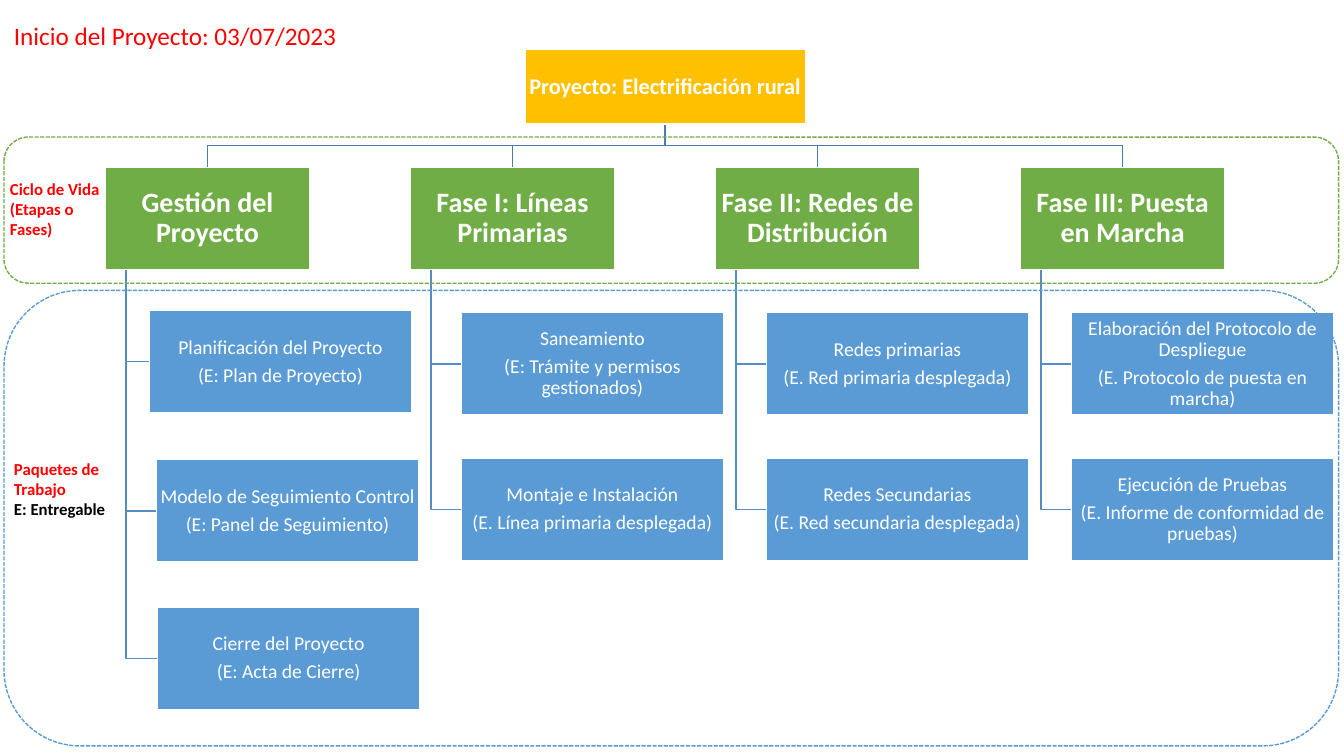
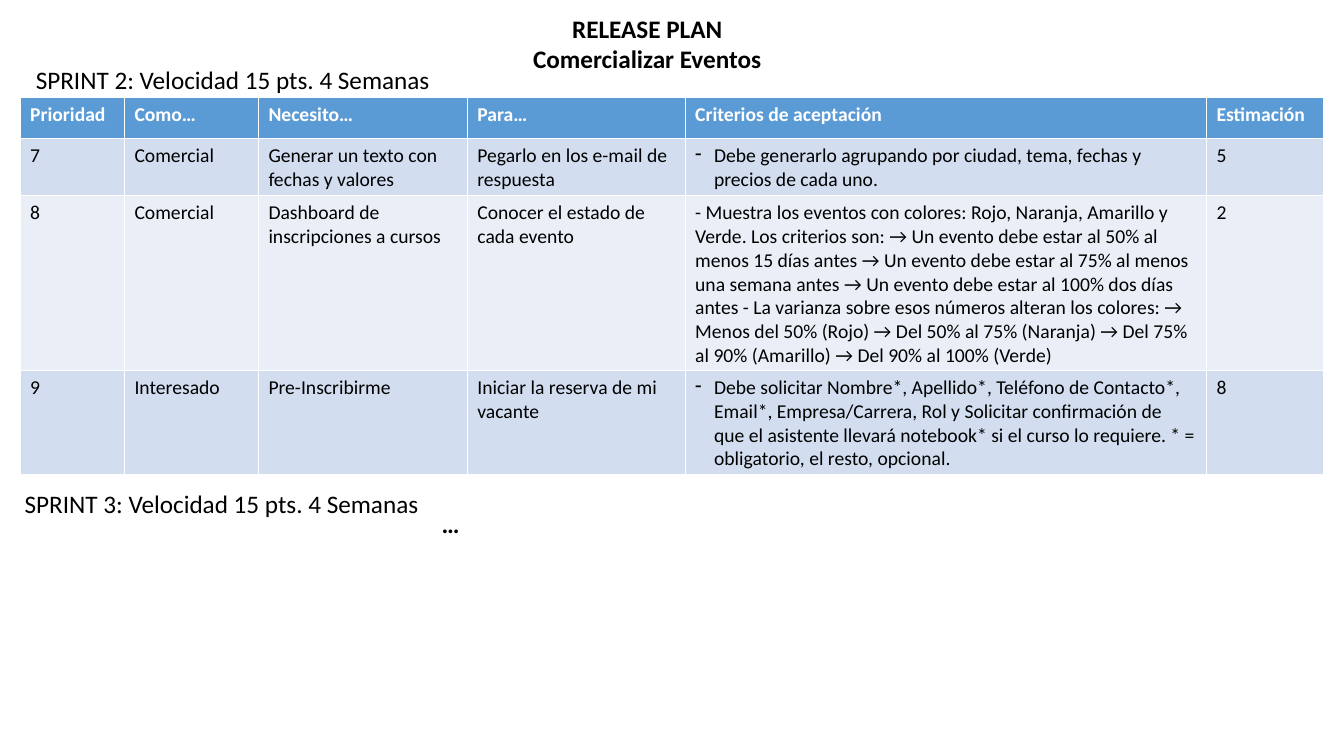
from lxml import etree
from pptx import Presentation, util as u
from pptx.dml.color import RGBColor
from pptx.enum import dml, shapes, text
from pptx.oxml.ns import qn

Pt = u.Pt
FONT = "Calibri"
HUES = {
    "white": "FFFFFF", "black": "000000", "red": "FF0000", "gold": "FFC000",
    "green": "70AD47", "blue": "5B9BD5", "trunk": "497CAB", "branch": "538DC1",
    "odd": "D2DEEF", "even": "EAEFF7",
}
LEFT, MID = text.PP_ALIGN.LEFT, text.PP_ALIGN.CENTER

GAP = 217.9
PHASE = (146.4, 73.2)
PACK = (187.4, 73.2)
PHASES = [
    ("Gestión del Proyecto", [
        (31.7, 221.8, "Planificación del Proyecto", "(E: Plan de Proyecto)"),
        (36.8, 328.4, "Modelo de Seguimiento Control", "(E: Panel de Seguimiento)"),
        (37.5, 433.6, "Cierre del Proyecto", "(E: Acta de Cierre)")]),
    ("Fase I: Líneas Primarias", [
        (36.6, 223.4, "Saneamiento", "(E: Trámite y permisos gestionados)"),
        (36.6, 327.4, "Montaje e Instalación", "(E. Línea primaria desplegada)")]),
    ("Fase II: Redes de Distribución", [
        (36.6, 223.4, "Redes primarias", "(E. Red primaria desplegada)"),
        (36.6, 327.4, "Redes Secundarias", "(E. Red secundaria desplegada)")]),
    ("Fase III: Puesta en Marcha", [
        (36.6, 223.4, "Elaboración del Protocolo de Despliegue",
         "(E. Protocolo de puesta en marcha)"),
        (36.6, 327.4, "Ejecución de Pruebas", "(E. Informe de conformidad de pruebas)")]),
]

WIDTHS = [74.5, 95.7, 149.2, 155.6, 372.4, 83.6]
ROWS = [
    ["Prioridad", "Como…", "Necesito…", "Para…", "Criterios de aceptación", "Estimación"],
    ["7", "Comercial", "Generar un texto con fechas y valores",
     "Pegarlo en los e-mail de respuesta",
     "Debe generarlo agrupando por ciudad, tema, fechas y precios de cada uno.", "5"],
    ["8", "Comercial", "Dashboard de inscripciones a cursos",
     "Conocer el estado de cada evento",
     "- Muestra los eventos con colores: Rojo, Naranja, Amarillo y Verde. Los criterios "
     "son: → Un evento debe estar al 50% al menos 15 días antes → Un evento debe estar "
     "al 75% al menos una semana antes → Un evento debe estar al 100% dos días antes - "
     "La varianza sobre esos números alteran los colores: → Menos del 50% (Rojo) → Del "
     "50% al 75% (Naranja) → Del 75% al 90% (Amarillo) → Del 90% al 100% (Verde)", "2"],
    ["9", "Interesado", "Pre-Inscribirme", "Iniciar la reserva de mi vacante",
     "Debe solicitar Nombre*, Apellido*, Teléfono de Contacto*, Email*, Empresa/Carrera, "
     "Rol y Solicitar confirmación de que el asistente llevará notebook* si el curso lo "
     "requiere. * = obligatorio, el resto, opcional.", "8"],
]
DASHED = {(1, 4), (3, 4)}


def hue(name):
    """Return the named colour."""
    return RGBColor.from_string(HUES[name])


def style(para, size, tone, bold=False, align=LEFT):
    """Set the font and alignment of a paragraph."""
    para.alignment = align
    font = para.font
    font.name, font.size, font.bold = FONT, Pt(size), bold
    font.color.rgb = hue(tone)


def label(slide, box, lines, size=18, bold=False, align=LEFT, wrap=False):
    """Add a text box from (words, tone) lines."""
    frame = slide.shapes.add_textbox(*map(Pt, box)).text_frame
    frame.word_wrap = wrap
    frame.auto_size = text.MSO_AUTO_SIZE.SHAPE_TO_FIT_TEXT
    frame.text = "\n".join(words for words, tone in lines)
    for para, (words, tone) in zip(frame.paragraphs, lines):
        style(para, size, tone, bold, align)


def block(slide, box, lines, size, fill, bold=False):
    """Add a filled box with centred white text."""
    shape = slide.shapes.add_shape(shapes.MSO_SHAPE.RECTANGLE, *map(Pt, box))
    shape.shadow.inherit = False
    shape.fill.solid()
    shape.fill.fore_color.rgb = hue(fill)
    shape.line.color.rgb = hue("white")
    shape.line.width = Pt(1)
    frame = shape.text_frame
    frame.word_wrap = True
    frame.vertical_anchor = text.MSO_ANCHOR.MIDDLE
    frame.margin_left = frame.margin_right = Pt(0.8)
    frame.margin_top = frame.margin_bottom = Pt(0.8)
    frame.text = "\n".join(lines)
    for para in frame.paragraphs:
        style(para, size, "white", bold, MID)
        para.line_spacing = 0.9
        para.space_after = Pt(size * 0.35)


def elbow(slide, dots, tone):
    """Draw an open line with square bends through the dots."""
    start, *rest = [(Pt(x), Pt(y)) for x, y in dots]
    pen = slide.shapes.build_freeform(*start)
    pen.add_line_segments(rest, close=False)
    shape = pen.convert_to_shape()
    shape.shadow.inherit = False
    shape.fill.background()
    shape.line.color.rgb = hue(tone)
    shape.line.width = Pt(1)


def band(slide, box, tone):
    """Outline a region with a dashed rounded frame."""
    shape = slide.shapes.add_shape(shapes.MSO_SHAPE.ROUNDED_RECTANGLE, *map(Pt, box))
    shape.shadow.inherit = False
    shape.fill.background()
    shape.line.color.rgb = hue(tone)
    shape.line.width = Pt(1)
    shape.line.dash_style = dml.MSO_LINE.SQUARE_DOT


def phase(slide, left, top, name, packs):
    """Place a phase with its work packages hanging below."""
    wide, high = PHASE
    stem = left + 14.9
    for shift, y, *lines in packs:
        mid = y + PACK[1] / 2
        elbow(slide, [(stem, top + high), (stem, mid), (left + shift, mid)], "branch")
    block(slide, (left, top, wide, high), [name], 20, "green", True)
    for shift, y, *lines in packs:
        block(slide, (left + shift, y, *PACK), lines, 14, "blue")


def tree(slide, left, top):
    """Build the breakdown chart from the project down."""
    root = (375, 35.4, 200.2, 53.2)
    hub, foot = root[0] + root[2] / 2, root[1] + root[3]
    bend = (foot + top) / 2
    for i, (name, packs) in enumerate(PHASES):
        x = left + i * GAP
        mid = x + PHASE[0] / 2
        elbow(slide, [(hub, foot), (hub, bend), (mid, bend), (mid, top)], "trunk")
        phase(slide, x, top, name, packs)
    block(slide, root, ["Proyecto: Electrificación rural"], 16, "gold", True)


def scope(slide):
    """Build the project breakdown slide."""
    tree(slide, 75, 119.5)
    label(slide, (2.9, 10.8, 247.7, 29), [("Inicio del Proyecto: 03/07/2023", "red")])
    band(slide, (2.9, 97.9, 953.3, 104.4), "green")
    band(slide, (2.9, 207.4, 953.3, 325.4), "blue")
    label(slide, (0, 123.8, 81.4, 51), [("Ciclo de Vida", "red"), ("(Etapas o Fases)", "red")],
          12, True, wrap=True)
    label(slide, (2.9, 324, 107.3, 51),
          [("Paquetes de Trabajo", "red"), ("E: Entregable", "black")], 12, True, wrap=True)


def dash(para):
    """Give a paragraph a hanging dash."""
    props = para._p.get_or_add_pPr()
    props.set("marL", str(Pt(13.5)))
    props.set("indent", str(-Pt(13.5)))
    etree.SubElement(props, qn("a:buChar")).set("char", "-")
    props.append(props.find(qn("a:defRPr")))


def grid(slide, left, top):
    """Build the table of user stories."""
    table = slide.shapes.add_table(len(ROWS), len(WIDTHS), Pt(left), Pt(top),
                                   Pt(sum(WIDTHS)), Pt(29.2 * len(ROWS))).table
    for col, wide in zip(table.columns, WIDTHS):
        col.width = Pt(wide)
    for r, row in enumerate(ROWS):
        fill = "blue" if r == 0 else "odd" if r % 2 else "even"
        for c, words in enumerate(row):
            cell = table.cell(r, c)
            cell.text = words
            cell.fill.solid()
            cell.fill.fore_color.rgb = hue(fill)
            para = cell.text_frame.paragraphs[0]
            style(para, 14, "black" if r else "white", r == 0)
            if (r, c) in DASHED:
                dash(para)


def plan(slide):
    """Build the release plan slide."""
    grid(slide, 14.4, 69.8)
    label(slide, (373, 5.8, 178.6, 51),
          [("RELEASE PLAN", "black"), ("Comercializar Eventos", "black")], 18, True, MID)
    for n, y, wide in ((2, 42.5, 315.4), (3, 344.9, 299.5)):
        label(slide, (8.6, y, wide, 29),
              [(f"SPRINT {n}: Velocidad 15 pts. 4 Semanas", "black")], align=MID, wrap=n == 2)
    label(slide, (308.2, 359.3, 27.4, 29), [("…", "black")], 18, True, MID)


def main():
    """Build and save the deck."""
    deck = Presentation()
    deck.slide_width, deck.slide_height = Pt(960), Pt(540)
    for build in (scope, plan):
        build(deck.slides.add_slide(deck.slide_layouts[6]))
    deck.save("out.pptx")


if __name__ == "__main__":
    main()
